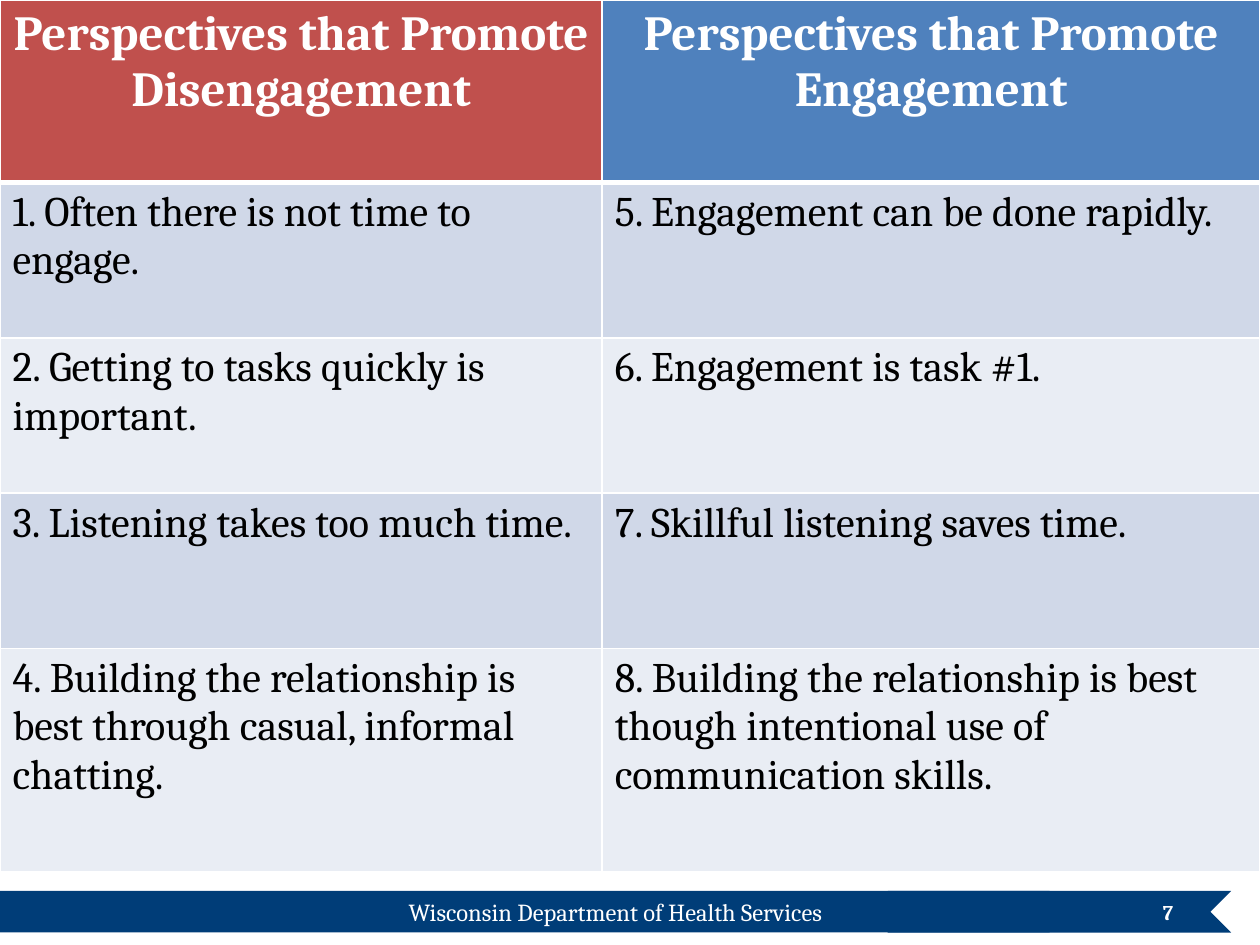
from dataclasses import dataclass

from lxml import etree
from pptx import Presentation
from pptx import util as u
from pptx.dml.color import RGBColor
from pptx.enum import shapes, text
from pptx.oxml.ns import qn


@dataclass(frozen=True)
class Theme:
    font: str = "Cambria"
    white: str = "FFFFFF"
    black: str = "000000"
    navy: str = "003D78"
    headers: tuple = ("C0504D", "4F81BD")
    bands: tuple = ("D0D8E8", "E9EDF4")
    header_size: int = 28
    body_size: int = 24
    footer_size: int = 14
    number_size: int = 12
    thin_border: int = 1
    thick_border: int = 3


class SlideBuilder:
    def __init__(self, slide, theme):
        self.slide = slide
        self.theme = theme

    def style_text(self, frame, size, color, bold=False, align=text.PP_ALIGN.LEFT):
        for paragraph in frame.paragraphs:
            paragraph.alignment = align
            for run in paragraph.runs:
                run.font.name = self.theme.font
                run.font.size = u.Pt(size)
                run.font.bold = bold
                run.font.color.rgb = RGBColor.from_string(color)

    def block(self, kind, left, top, width, height, rotation=0):
        shape = self.slide.shapes.add_shape(kind, u.Cm(left), u.Cm(top), u.Cm(width), u.Cm(height))
        shape.rotation = rotation
        shape.shadow.inherit = False
        shape.fill.solid()
        shape.fill.fore_color.rgb = RGBColor.from_string(self.theme.navy)
        shape.line.fill.background()

    def label(self, words, left, top, width, height, size, align, anchor, bold=False):
        shape = self.slide.shapes.add_textbox(u.Cm(left), u.Cm(top), u.Cm(width), u.Cm(height))
        frame = shape.text_frame
        frame.word_wrap = True
        frame.vertical_anchor = anchor
        frame.text = words
        self.style_text(frame, size, self.theme.white, bold, align)

    def border(self, cell, side, points):
        properties = cell._tc.get_or_add_tcPr()
        line = etree.SubElement(properties, qn(f"a:ln{side}"), w=str(u.Pt(points)))
        fill = etree.SubElement(line, qn("a:solidFill"))
        etree.SubElement(fill, qn("a:srgbClr"), val=self.theme.white)

    def cell(self, cell, words, row, column):
        theme = self.theme
        is_header = row == 0
        for side in "LRTB":
            touches_header = (side == "B" and row == 0) or (side == "T" and row == 1)
            self.border(cell, side, theme.thick_border if touches_header else theme.thin_border)
        fill = theme.headers[column] if is_header else theme.bands[(row - 1) % 2]
        cell.fill.solid()
        cell.fill.fore_color.rgb = RGBColor.from_string(fill)
        cell.text_frame.text = words
        if is_header:
            self.style_text(cell.text_frame, theme.header_size, theme.white, True, text.PP_ALIGN.CENTER)
        else:
            self.style_text(cell.text_frame, theme.body_size, theme.black)

    def table(self, rows, widths, heights):
        frame = self.slide.shapes.add_table(
            len(rows), len(widths), 0, 0, u.Cm(sum(widths)), u.Cm(sum(heights)))
        table = frame.table
        for column, width in zip(table.columns, widths):
            column.width = u.Cm(width)
        for row, height in zip(table.rows, heights):
            row.height = u.Cm(height)
        for row, entries in enumerate(rows):
            for column, words in enumerate(entries):
                self.cell(table.cell(row, column), words, row, column)


PERSPECTIVES = [
    ("Perspectives that Promote Disengagement", "Perspectives that Promote Engagement"),
    ("1. Often there is not time to engage.", "5. Engagement can be done rapidly."),
    ("2. Getting to tasks quickly is important.", "6. Engagement is task #1."),
    ("3. Listening takes too much time.", "7. Skillful listening saves time."),
    ("4. Building the relationship is best through casual, informal chatting.",
     "8. Building the relationship is best though intentional use of communication skills."),
]


def main():
    presentation = Presentation()
    presentation.slide_width = u.Cm(25.4)
    presentation.slide_height = u.Cm(19.05)
    slide = presentation.slides.add_slide(presentation.slide_layouts[6])
    theme = Theme()
    builder = SlideBuilder(slide, theme)

    footer_top, footer_height = 17.96, 0.84
    builder.block(shapes.MSO_SHAPE.CHEVRON, 17.48, footer_top, 7.34, footer_height, rotation=180)
    builder.block(shapes.MSO_SHAPE.RECTANGLE, -0.84, footer_top, 22, footer_height)
    builder.label("Wisconsin Department of Health Services", 0, footer_top, 24.82, 0.86,
                  theme.footer_size, text.PP_ALIGN.CENTER, text.MSO_ANCHOR.TOP)
    builder.label("7", 17.98, 17.88, 5.92, 1.02,
                  theme.number_size, text.PP_ALIGN.RIGHT, text.MSO_ANCHOR.MIDDLE, bold=True)
    builder.table(PERSPECTIVES, widths=[12.14, 13.26], heights=[3.68] + [3.13] * 3 + [4.5])

    presentation.save("out.pptx")


if __name__ == "__main__":
    main()
